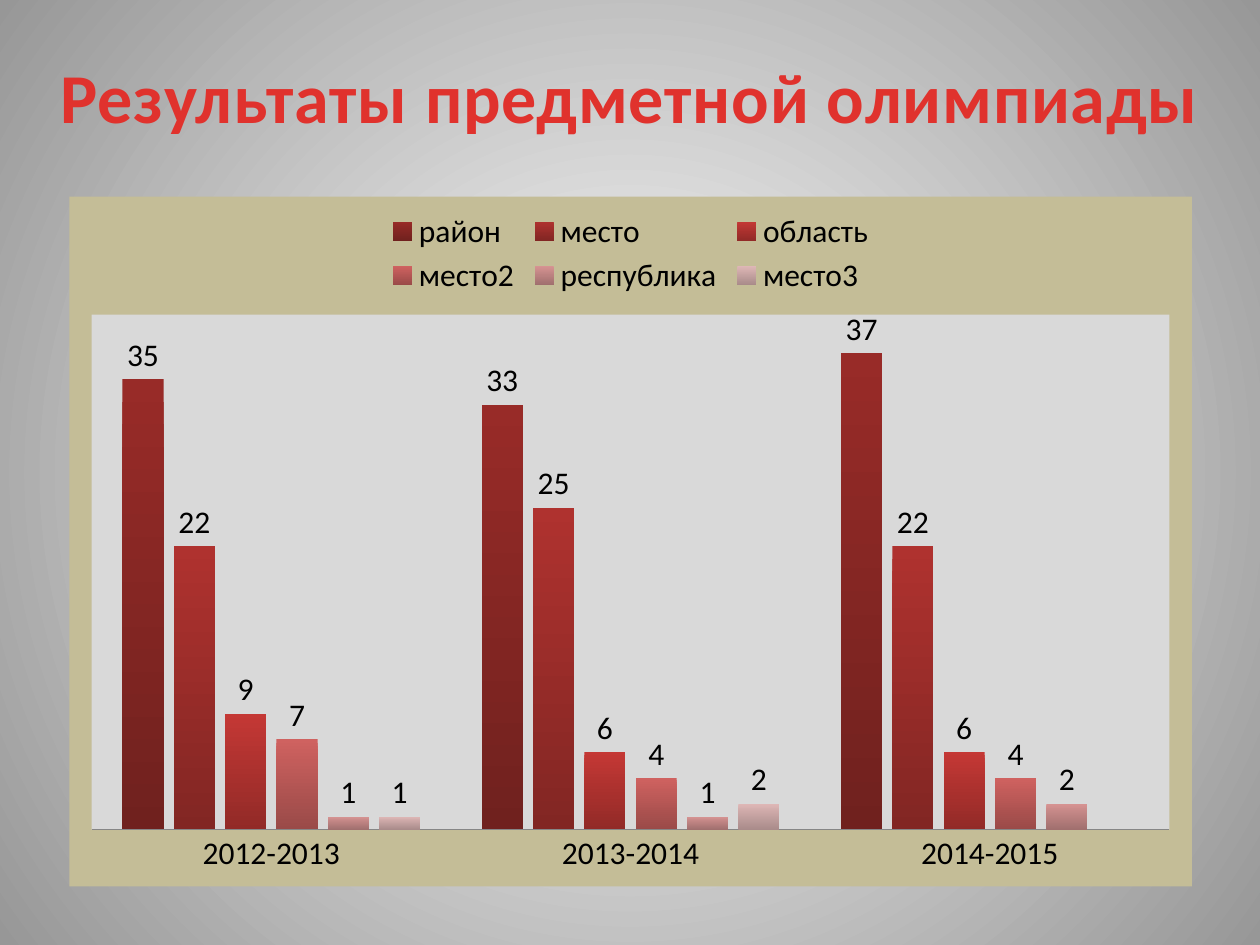
from typing import NamedTuple, Optional

from lxml.etree import SubElement
from pptx import Presentation
from pptx.chart.data import CategoryChartData
from pptx.dml.color import RGBColor
from pptx.dml.fill import FillFormat
from pptx.enum.chart import XL_CHART_TYPE, XL_LABEL_POSITION, XL_LEGEND_POSITION, XL_TICK_MARK
from pptx.enum.text import MSO_ANCHOR, MSO_AUTO_SIZE, PP_ALIGN
from pptx.oxml import parse_xml
from pptx.oxml.ns import nsdecls, qn
from pptx.util import Inches, Pt

FONT = "Calibri"
COLORS = {
    "text": "000000",
    "axis": "868686",
    "chart": "C4BD97",
    "plot": "D9D9D9",
    "glow": "FFFFFF",
    "edge": "979797",
    "title": "E0322D",
    "title_dark": "A2201C",
}


class Share(NamedTuple):
    """A frame given as shares of the slide's width and height."""
    left: float
    top: float
    width: float
    height: float


class Level(NamedTuple):
    name: str
    values: tuple[Optional[int], ...]
    top_color: str
    bottom_color: str


TITLE_FRAME = Share(0.035, 0.05, 0.93, 0.1)
CHART_FRAME = Share(0.055, 0.208, 0.891, 0.73)
YEARS = ("2012-2013", "2013-2014", "2014-2015")
LEVELS = (
    Level("район", (35, 33, 37), "982B28", "70211E"),
    Level("место", (22, 25, 22), "AF322F", "822623"),
    Level("область", (9, 6, 6), "C43835", "922A27"),
    Level("место2", (7, 4, 4), "CF6260", "9A4A48"),
    Level("республика", (1, 1, 2), "D69392", "A06F6E"),
    Level("место3", (1, 2, None), "DEB7B6", "A98B8A"),
)


def color(key: str) -> RGBColor:
    return RGBColor.from_string(COLORS[key])


def place(page_size: tuple[int, int], share: Share) -> tuple[int, int, int, int]:
    width, height = page_size
    return (int(share.left * width), int(share.top * height),
            int(share.width * width), int(share.height * height))


def fill_gradient(fill: FillFormat, first: str, last: str, start: float = 0) -> None:
    """Fill from top to bottom, holding the first colour up to start."""
    fill.gradient()
    fill.gradient_angle = 270
    for stop, value, position in zip(fill.gradient_stops, (first, last), (start, 1)):
        stop.color.rgb = RGBColor.from_string(value)
        stop.position = position


def paint_background(page) -> None:
    fill_gradient(page.background.fill, COLORS["glow"], COLORS["edge"])
    gradient = next(page.element.iter(qn("a:gradFill")))
    gradient.remove(gradient.find(qn("a:lin")))
    circle = SubElement(gradient, qn("a:path"), path="circle")
    SubElement(circle, qn("a:fillToRect"), l="50000", t="50000", r="50000", b="50000")


def area_fill(key: str):
    return parse_xml(
        f'<c:spPr {nsdecls("c", "a")}><a:solidFill><a:srgbClr val="{COLORS[key]}"/>'
        "</a:solidFill><a:ln><a:noFill/></a:ln></c:spPr>"
    )


def add_title(page, page_size: tuple[int, int]) -> None:
    box = page.shapes.add_textbox(*place(page_size, TITLE_FRAME))
    frame = box.text_frame
    frame.word_wrap = False
    frame.auto_size = MSO_AUTO_SIZE.SHAPE_TO_FIT_TEXT
    frame.vertical_anchor = MSO_ANCHOR.TOP
    para = frame.paragraphs[0]
    para.alignment = PP_ALIGN.CENTER
    span = para.add_run()
    span.text = "Результаты предметной олимпиады"
    span.font.name = FONT
    span.font.size = Pt(40)
    span.font.bold = True
    fill_gradient(span.font.fill, COLORS["title"], COLORS["title_dark"], 0.25)
    span.font._element.set("spc", "50")


def add_results_chart(page, page_size: tuple[int, int]) -> None:
    data = CategoryChartData()
    data.categories = YEARS
    for level in LEVELS:
        data.add_series(level.name, level.values)
    chart = page.shapes.add_chart(
        XL_CHART_TYPE.COLUMN_CLUSTERED, *place(page_size, CHART_FRAME), data).chart
    chart.has_title = False
    chart.font.name = FONT
    chart.font.size = Pt(18)
    chart.font.color.rgb = color("text")

    chart.has_legend = True
    chart.legend.position = XL_LEGEND_POSITION.TOP
    chart.legend.include_in_layout = False

    chart.category_axis.major_tick_mark = XL_TICK_MARK.NONE
    chart.category_axis.format.line.color.rgb = color("axis")
    chart.value_axis.visible = False
    chart.value_axis.has_major_gridlines = False
    chart.value_axis.minimum_scale = 0
    chart.value_axis.maximum_scale = 40

    plot = chart.plots[0]
    plot.gap_width = 150
    plot.overlap = -25
    plot.vary_by_categories = False
    plot.has_data_labels = True
    plot.data_labels.show_value = True
    plot.data_labels.position = XL_LABEL_POSITION.OUTSIDE_END
    for series, level in zip(plot.series, LEVELS):
        fill_gradient(series.format.fill, level.top_color, level.bottom_color)

    chart_part = chart.element.find(qn("c:chart"))
    chart_part.addnext(area_fill("chart"))
    chart_part.find(qn("c:plotArea")).append(area_fill("plot"))


def main() -> None:
    deck = Presentation()
    deck.slide_width, deck.slide_height = Inches(10), Inches(7.5)
    page_size = (deck.slide_width, deck.slide_height)
    page = deck.slides.add_slide(deck.slide_layouts[6])
    paint_background(page)
    add_results_chart(page, page_size)
    add_title(page, page_size)
    deck.save("out.pptx")


if __name__ == "__main__":
    main()
